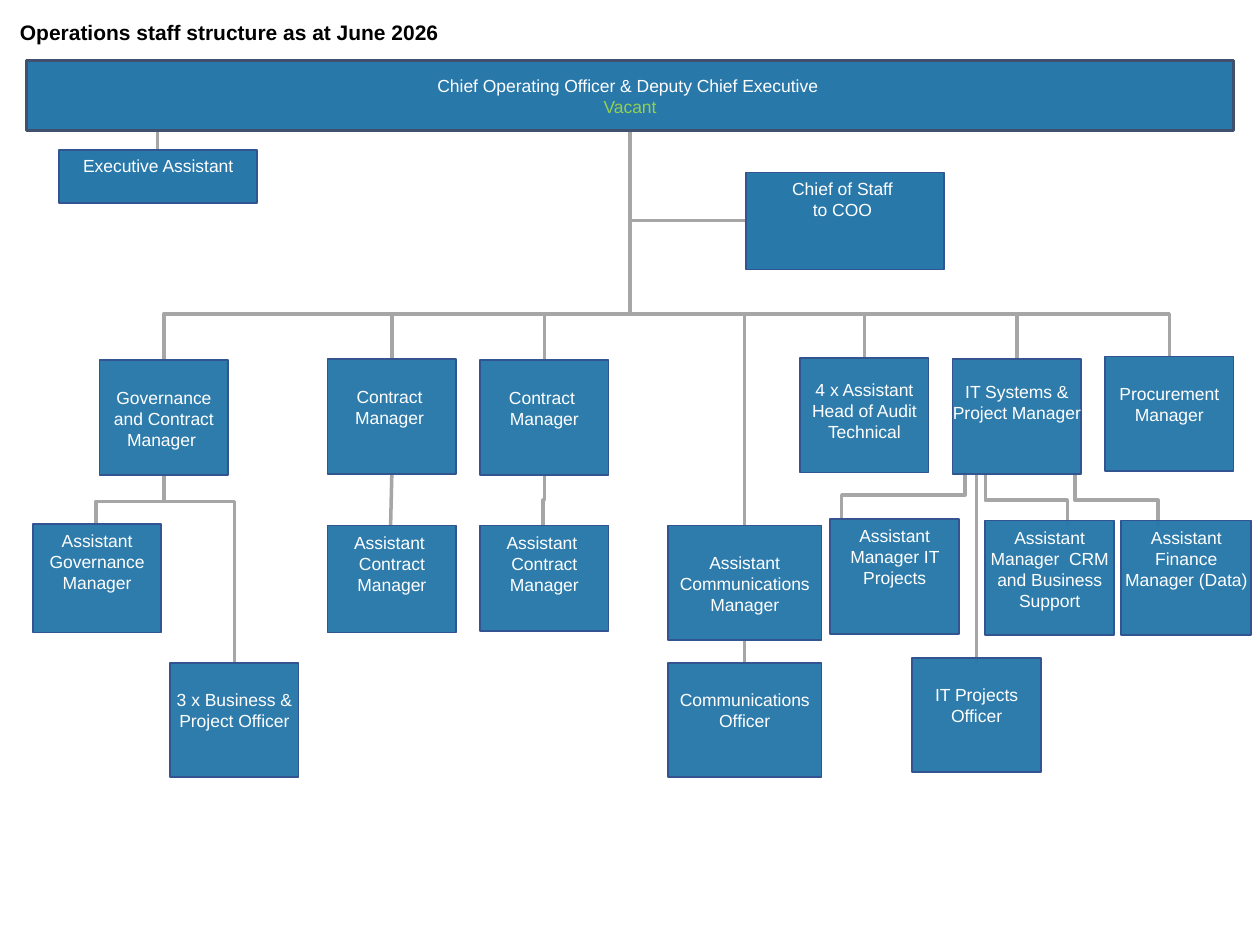
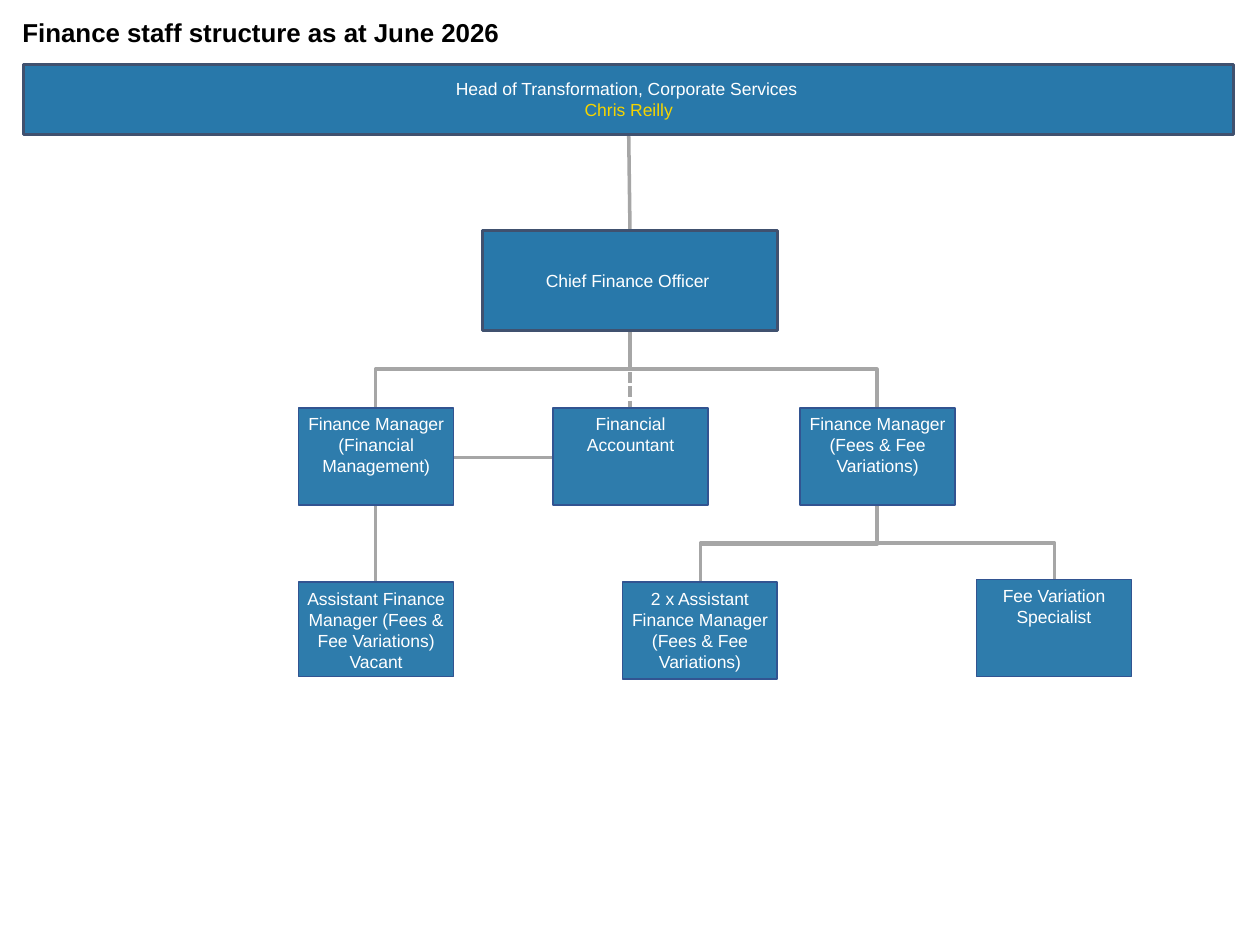
from dataclasses import dataclass
from typing import Optional

from lxml.etree import SubElement
from pptx import Presentation
from pptx.dml.color import RGBColor
from pptx.enum.dml import MSO_LINE_DASH_STYLE as Dash
from pptx.enum.shapes import MSO_CONNECTOR as Connector, MSO_SHAPE as Preset
from pptx.enum.text import MSO_ANCHOR as Anchor, PP_ALIGN as Align
from pptx.oxml.ns import qn
from pptx.slide import Slide
from pptx.util import Inches, Pt

# Shared look
FONT = "Arial"
BLACK = RGBColor(0x00, 0x00, 0x00)
WHITE = RGBColor(0xFF, 0xFF, 0xFF)
BOX_BLUE = RGBColor(0x28, 0x78, 0xAA)
BOX_BORDER = RGBColor(0x32, 0x54, 0x91)
LEADER_BORDER = RGBColor(0x40, 0x51, 0x6F)
LINE_GREY = RGBColor(0xA6, 0xA6, 0xA6)
VACANT_GREEN = RGBColor(0x92, 0xD0, 0x50)
NAME_YELLOW = RGBColor(0xF5, 0xD4, 0x00)

Point = tuple[float, float]


@dataclass(frozen=True)
class BoxStyle:
    side: float = 0.02
    top: float = 0.05
    bottom: float = 0.05
    anchor: Anchor = Anchor.TOP
    border: RGBColor = BOX_BORDER
    border_width: float = 1
    opacity: int = 97


LEADER = BoxStyle(side=0.1, anchor=Anchor.MIDDLE, border=LEADER_BORDER,
                  border_width=1.75, opacity=100)
SUPPORT = BoxStyle(side=0.04, top=0.04, bottom=0.04, opacity=100)
FINANCE = BoxStyle(side=0.04, top=0.04, bottom=0.04)
ROLE = BoxStyle()
LOWERED = BoxStyle(top=0.21)  # text starts one line down
LOWERED_WIDE = BoxStyle(side=0, top=0.21)
LOWERED_TIGHT = BoxStyle(side=0, top=0.17, bottom=0)


@dataclass(frozen=True)
class Box:
    lines: tuple[str, ...]
    left: float
    top: float
    width: float = 1.02
    height: float = 0.91
    style: BoxStyle = ROLE
    last_color: RGBColor = WHITE


@dataclass(frozen=True)
class Link:
    """A straight line, or an elbow that turns at the height bus."""
    start: Point
    end: Point
    bus: Optional[float] = None
    dashed: bool = False
    width: float = 2


@dataclass(frozen=True)
class Title:
    text: str
    left: float
    top: float
    width: float
    size: float
    spacing: float


@dataclass(frozen=True)
class Chart:
    title: Title
    links: list[Link]
    boxes: list[Box]


def apply(target: object, values: dict) -> None:
    for name, value in values.items():
        setattr(target, name, value)


def add_text(paragraph, text: str, size: float, color: RGBColor, bold: bool = False) -> None:
    run = paragraph.add_run()
    run.text = text
    apply(run.font, {"name": FONT, "size": Pt(size), "bold": bold})
    run.font.color.rgb = color


def draw_title(slide: Slide, title: Title) -> None:
    shape = slide.shapes.add_textbox(Inches(title.left), Inches(title.top),
                                     Inches(title.width), Inches(0.29))
    apply(shape.text_frame, {"word_wrap": True, "vertical_anchor": Anchor.MIDDLE})
    paragraph = shape.text_frame.paragraphs[0]
    paragraph.line_spacing = title.spacing
    add_text(paragraph, title.text, title.size, BLACK, bold=True)


def draw_box(slide: Slide, box: Box) -> None:
    style = box.style
    shape = slide.shapes.add_shape(Preset.RECTANGLE, Inches(box.left), Inches(box.top),
                                   Inches(box.width), Inches(box.height))
    shape.shadow.inherit = False
    shape.fill.solid()
    shape.fill.fore_color.rgb = BOX_BLUE
    if style.opacity < 100:
        color = shape._element.spPr.find(f"{qn('a:solidFill')}/{qn('a:srgbClr')}")
        SubElement(color, qn("a:alpha"), val=str(style.opacity * 1000))
    shape.line.color.rgb = style.border
    shape.line.width = Pt(style.border_width)

    frame = shape.text_frame
    apply(frame, {
        "word_wrap": True, "vertical_anchor": style.anchor,
        "margin_left": Inches(style.side), "margin_right": Inches(style.side),
        "margin_top": Inches(style.top), "margin_bottom": Inches(style.bottom),
    })
    for index, text in enumerate(box.lines):
        paragraph = frame.add_paragraph() if index else frame.paragraphs[0]
        paragraph.alignment = Align.CENTER
        add_text(paragraph, text, 10, box.last_color if index else WHITE)


def add_elbow(slide: Slide, link: Link):
    """Add an elbow that leaves downwards: a sideways one, turned a quarter."""
    (x1, y1), (x2, y2) = link.start, link.end
    across, down = abs(x2 - x1), y2 - y1
    left, top = (x1 + x2 - down) / 2, (y1 + y2 - across) / 2
    ends = [left, left + down]
    if x2 > x1:
        ends.reverse()
    connector = slide.shapes.add_connector(
        Connector.ELBOW, Inches(ends[0]), Inches(top), Inches(ends[1]), Inches(top + across))
    properties = connector._element.spPr
    properties.find(qn("a:xfrm")).set("rot", str((270 if x2 > x1 else 90) * 60000))
    geometry = properties.find(qn("a:prstGeom"))
    if link.bus == y2:
        geometry.set("prst", "bentConnector2")
    else:
        turn = round((link.bus - y1) / down * 100000)
        SubElement(geometry.find(qn("a:avLst")), qn("a:gd"), name="adj1", fmla=f"val {turn}")
    return connector


def draw_link(slide: Slide, link: Link) -> None:
    if link.bus is None:
        connector = slide.shapes.add_connector(
            Connector.STRAIGHT, *(Inches(value) for value in link.start + link.end))
    else:
        connector = add_elbow(slide, link)
    connector.line.color.rgb = LINE_GREY
    connector.line.width = Pt(link.width)
    if link.dashed:
        connector.line.dash_style = Dash.SQUARE_DOT
    SubElement(connector._element.spPr, qn("a:effectLst"))


def draw_chart(slide: Slide, chart: Chart) -> None:
    for link in chart.links:
        draw_link(slide, link)
    draw_title(slide, chart.title)
    for box in chart.boxes:
        draw_box(slide, box)


# Operations
COO_EXIT = (5, 1.04)
COO_REPORTS = [(8.07, 2.85), (6.86, 2.84), (5.91, 4.17), (1.3, 2.86),
               (3.11, 2.85), (4.32, 2.86), (9.28, 2.83)]
OPERATIONS = Chart(
    Title("Operations staff structure as at June 2026", 0.06, 0.12, 7.92, 12, 0.9),
    [
        Link((7.75, 3.76), (7.75, 5.26)),
        Link((5.91, 5.08), (5.91, 5.26)),
        Link((1.25, 1.04), (1.25, 1.19), width=2.25),
        Link((3.11, 3.76), (3.1, 4.17)),
        *(Link(COO_EXIT, end, 2.49) for end in COO_REPORTS),
        Link(COO_EXIT, (5.92, 1.75), 1.75),
        Link((1.3, 3.77), (0.76, 4.16), 3.98),
        Link((1.3, 3.77), (1.86, 5.26), 3.98),
        Link((4.32, 3.77), (4.31, 4.17), 3.97),
        Link((7.66, 3.75), (6.68, 4.11), 3.93),
        Link((7.82, 3.77), (8.47, 4.18), 3.97),
        Link((8.53, 3.77), (9.19, 4.18), 3.97),
    ],
    [
        # Leadership and support
        Box(("Chief Operating Officer & Deputy Chief Executive ", "Vacant"),
            0.21, 0.48, 9.58, 0.56, LEADER, VACANT_GREEN),
        Box(("Executive Assistant",), 0.47, 1.19, 1.57, 0.42, SUPPORT),
        Box(("Chief of Staff ", "to COO "), 5.92, 1.37, 1.57, 0.77, SUPPORT),
        # Managers
        Box(("Governance and Contract Manager ",), 0.79, 2.86, style=LOWERED),
        Box(("Contract ", "Manager "), 2.6, 2.85, style=LOWERED),
        Box(("Contract ", "Manager"), 3.81, 2.86, style=LOWERED),
        Box(("4 x Assistant Head of Audit Technical",), 6.35, 2.84, style=LOWERED_TIGHT),
        Box(("IT Systems & Project Manager",), 7.56, 2.85, style=LOWERED_TIGHT),
        Box(("Procurement Manager",), 8.77, 2.83, style=LOWERED),
        # Assistant managers
        Box(("Assistant Governance", "Manager"), 0.26, 4.16, height=0.86),
        Box(("Assistant ", "Contract Manager"), 2.6, 4.17, height=0.85),
        Box(("Assistant ", "Contract Manager"), 3.81, 4.17, height=0.84),
        Box(("Assistant Communications Manager",), 5.3, 4.17, 1.22, style=LOWERED_WIDE),
        Box(("Assistant Manager IT Projects",), 6.59, 4.12),
        Box(("Assistant Manager  CRM and Business Support",), 7.82, 4.13),
        Box(("Assistant Finance Manager (Data)",), 8.9, 4.13, 1.03),
        # Officers
        Box(("3 x Business & Project Officer",), 1.35, 5.26, style=LOWERED),
        Box(("Communications Officer",), 5.3, 5.26, 1.22, style=LOWERED),
        Box(("IT Projects Officer",), 7.24, 5.22, style=LOWERED),
    ],
)

# Finance
CFO_EXIT = (5, 2.62)
FEES_EXIT = (6.96, 4.01)
FINANCE_MANAGERS = [
    (2.37, "Finance Manager (Financial Management)"),
    (4.39, "Financial Accountant"),
    (6.35, "Finance Manager (Fees & Fee Variations)"),
]
FINANCE_CHART = Chart(
    Title("Finance staff structure as at June 2026", 0.08, 0.14, 7.84, 14.8, 0.7),
    [
        Link((3.6, 3.63), (4.39, 3.63)),
        Link((2.98, 4.01), (2.98, 4.62)),
        Link((4.99, 1.07), (5, 1.83)),
        Link(CFO_EXIT, (5, 3.24), dashed=True),
        Link(CFO_EXIT, (6.96, 3.24), 2.93),
        Link(CFO_EXIT, (2.98, 3.24), 2.93),
        Link(FEES_EXIT, (5.56, 4.6), 4.31),
        Link(FEES_EXIT, (8.37, 4.6), 4.31),
        Link(FEES_EXIT, (5.56, 4.62), 4.32),
    ],
    [
        Box(("Head of Transformation, Corporate Services ", "Chris Reilly"),
            0.19, 0.51, 9.6, 0.56, LEADER, NAME_YELLOW),
        Box(("Chief Finance Officer ",), 3.83, 1.83, 2.34, 0.79, LEADER),
        *(Box((text,), left, 3.24, 1.23, 0.77, FINANCE) for left, text in FINANCE_MANAGERS),
        Box(("Assistant Finance Manager (Fees & Fee Variations)", "Vacant"),
            2.37, 4.62, 1.23, 0.75),
        Box(("2 x Assistant Finance Manager (Fees & Fee Variations)",),
            4.94, 4.62, 1.23, 0.77),
        Box(("Fee Variation Specialist",), 7.75, 4.6, 1.23, 0.77, FINANCE),
    ],
)


def main() -> None:
    presentation = Presentation()
    apply(presentation, {"slide_width": Inches(10), "slide_height": Inches(7.5)})
    for chart in (OPERATIONS, FINANCE_CHART):
        draw_chart(presentation.slides.add_slide(presentation.slide_layouts[6]), chart)
    presentation.save("out.pptx")


if __name__ == "__main__":
    main()
